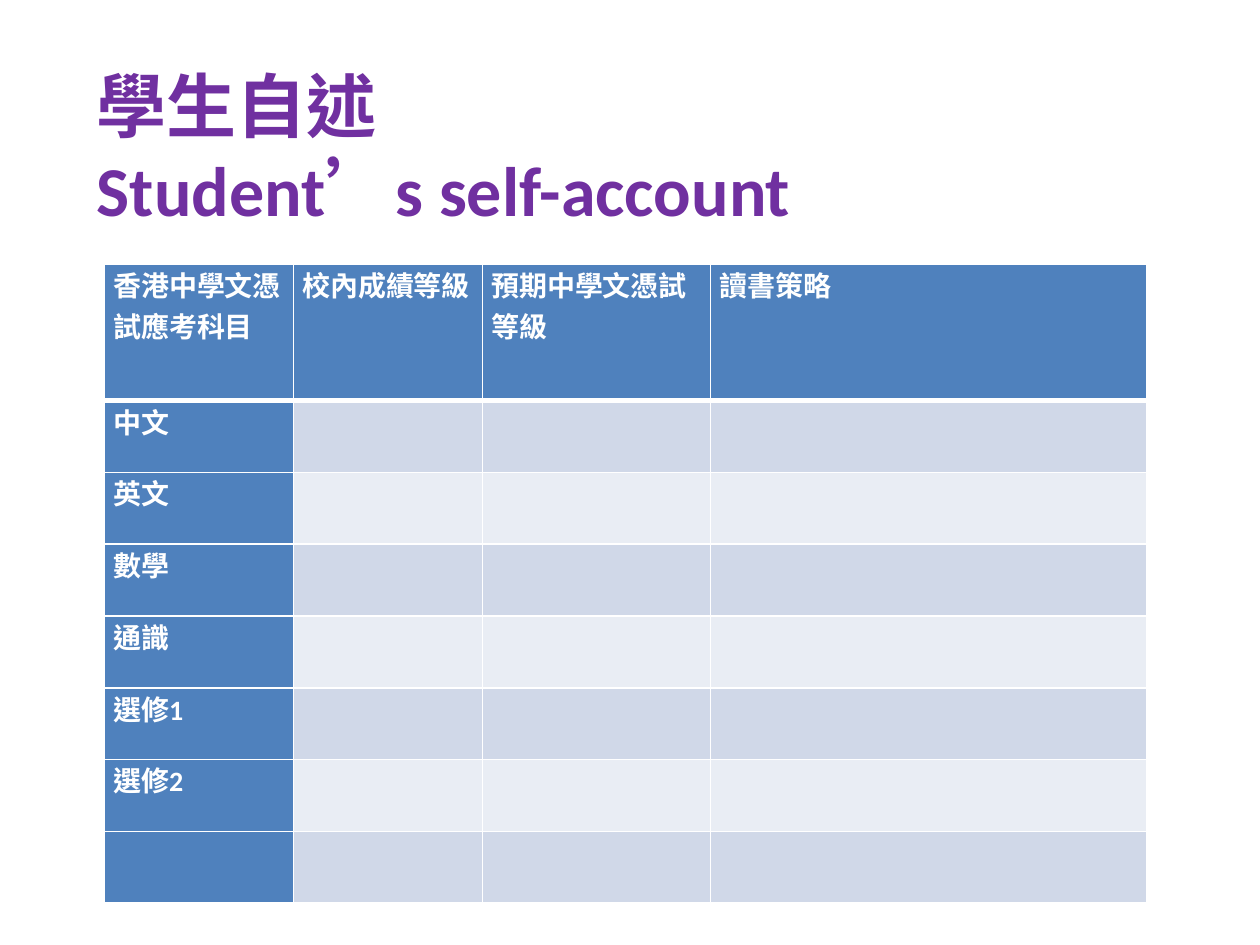
from lxml import etree
from pptx import Presentation
from pptx.dml.color import RGBColor
from pptx.enum import text
from pptx.oxml import ns
from pptx.util import Inches, Pt

COLORS = {
    "title": "7030A0",
    "head": "4F81BD",
    "band_dark": "D0D8E8",
    "band_light": "E9EDF4",
    "white": "FFFFFF",
}
LATIN = "Calibri"
CJK = "Noto Sans CJK SC"
HEADERS = ["香港中學文憑試應考科目", "校內成績等級", "預期中學文憑試等級", "讀書策略"]
SUBJECTS = ["中文", "英文", "數學", "通識", "選修1", "選修2", ""]
COL_WIDTHS = [1.5, 1.5, 1.81, 3.46]
HEADER_HEIGHT, ROW_HEIGHT = 1.08, 0.57


def rgb(name):
    return RGBColor.from_string(COLORS[name])


def add_run(p, words, size, color, font, lang):
    r = p.add_run()
    r.text = words
    r.font.size = Pt(size)
    r.font.bold = True
    r.font.name = font
    r.font.color.rgb = rgb(color)
    rpr = r._r.get_or_add_rPr()
    rpr.set("lang", lang)
    etree.SubElement(rpr, ns.qn("a:ea")).set("typeface", CJK)


def set_borders(cell, bottom):
    tcpr = cell._tc.get_or_add_tcPr()
    widths = {"lnL": 1, "lnR": 1, "lnT": 1, "lnB": bottom}
    for i, (side, width) in enumerate(widths.items()):
        ln = etree.Element(ns.qn(f"a:{side}"), w=str(Pt(width)))
        fill = etree.SubElement(ln, ns.qn("a:solidFill"))
        etree.SubElement(fill, ns.qn("a:srgbClr")).set("val", COLORS["white"])
        tcpr.insert(i, ln)


def add_title(s, left, top, width, height):
    box = s.shapes.add_textbox(Inches(left), Inches(top), Inches(width), Inches(height))
    tf = box.text_frame
    tf.word_wrap = True
    tf.vertical_anchor = text.MSO_ANCHOR.MIDDLE
    p = tf.paragraphs[0]
    add_run(p, "學生自述", 40, "title", CJK, "zh-TW")
    p.add_line_break()
    add_run(p, "Student", 40, "title", LATIN, "en-US")
    add_run(p, "’", 40, "title", "Times New Roman", "zh-TW")
    add_run(p, "s self-account", 40, "title", LATIN, "en-US")


def fill_cell(cell, words, color, bottom):
    cell.fill.solid()
    cell.fill.fore_color.rgb = rgb(color)
    cell.margin_left = cell.margin_right = Inches(0.07)
    cell.margin_top = cell.margin_bottom = 0
    set_borders(cell, bottom)
    p = cell.text_frame.paragraphs[0]
    if words:
        add_run(p, words, 16, "white", LATIN, "zh-TW")
    else:
        p.font.size = Pt(16)


def add_subject_table(s, left, top):
    rows = [HEADERS] + [[subject, "", "", ""] for subject in SUBJECTS]
    heights = [HEADER_HEIGHT] + [ROW_HEIGHT] * len(SUBJECTS)
    table = s.shapes.add_table(
        len(rows), len(COL_WIDTHS), Inches(left), Inches(top),
        Inches(sum(COL_WIDTHS)), Inches(sum(heights)),
    ).table
    table.first_col = True
    for column, width in zip(table.columns, COL_WIDTHS):
        column.width = Inches(width)
    for i, (row, height) in enumerate(zip(rows, heights)):
        table.rows[i].height = Inches(height)
        band = "band_dark" if i % 2 else "band_light"
        for j, words in enumerate(row):
            color = "head" if i == 0 or j == 0 else band
            fill_cell(table.cell(i, j), words, color, 3 if i == 0 else 1)


def main():
    prs = Presentation()
    prs.slide_width, prs.slide_height = Inches(10), Inches(7.5)
    s = prs.slides.add_slide(prs.slide_layouts[6])
    add_title(s, 0.67, 0.36, 8.5, 1.61)
    add_subject_table(s, 0.83, 2.1)
    prs.save("out.pptx")


if __name__ == "__main__":
    main()
